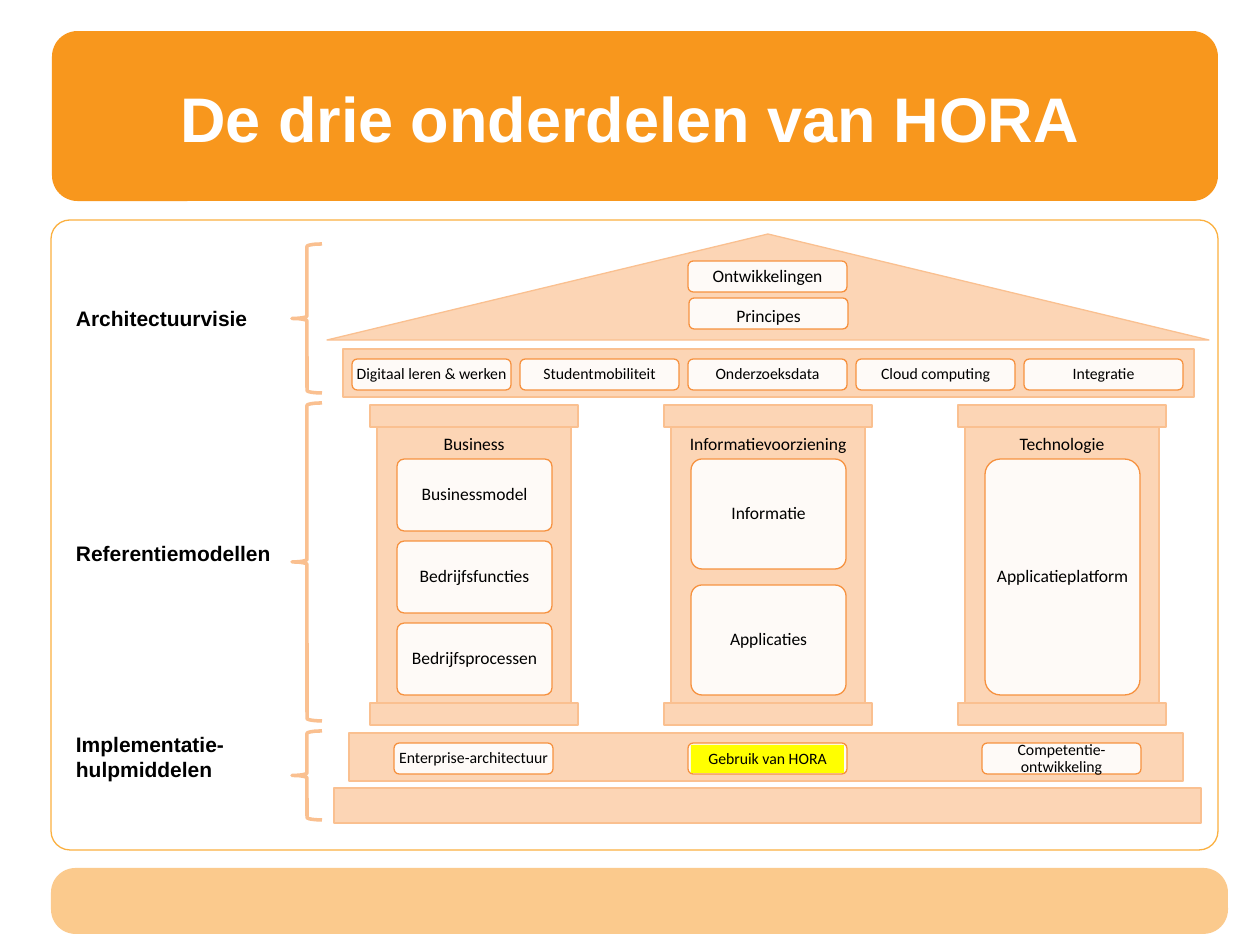
from lxml import etree
from pptx import Presentation
from pptx.dml.color import RGBColor
from pptx.enum.shapes import MSO_SHAPE
from pptx.enum.text import MSO_ANCHOR, PP_ALIGN
from pptx.oxml.ns import qn
from pptx.util import Emu, Pt

RECT = MSO_SHAPE.RECTANGLE
ROUND = MSO_SHAPE.ROUNDED_RECTANGLE
ROOF = MSO_SHAPE.ISOSCELES_TRIANGLE
BRACE = MSO_SHAPE.LEFT_BRACE
TOP, MIDDLE = MSO_ANCHOR.TOP, MSO_ANCHOR.MIDDLE
LEFT, CENTER = PP_ALIGN.LEFT, PP_ALIGN.CENTER

SCALE = 914400 / 126
ORANGE, FRAME, EDGE = "F8971D", "FBB040", "F69240"
STONE, TRIM = "FCD5B5", "FAC090"
WHITE, BLACK, YELLOW = "FFFFFF", "000000", "FFFF00"

LABELS = [("Architectuurvisie", 318, 244, 149),
          ("Referentiemodellen", 553, 403, 318),
          ("Implementatie-\vhulpmiddelen", 757, 731, 89)]
THEMES = ["Digitaal leren & werken", "Studentmobiliteit", "Onderzoeksdata",
          "Cloud computing", "Integratie"]
PILLARS = [("Business", 10, ["Businessmodel", "Bedrijfsfuncties",
                             "Bedrijfsprocessen"]),
           ("Informatievoorziening", 16, ["Informatie", "Applicaties"]),
           ("Technologie", 0, ["Applicatieplatform"])]
TOOLS = ["Enterprise-architectuur", "", "Competentie-ontwikkeling"]


def px(n):
    return Emu(round(n * SCALE))


def color(code):
    return RGBColor.from_string(code)


class Painter:
    def __init__(self, slide):
        self.shapes = slide.shapes

    def shape(self, kind, box, fill=None, line=None, width=0.75, adj=None,
              alpha=None):
        item = self.shapes.add_shape(kind, *map(px, box))
        item.shadow.inherit = False
        if adj is not None:
            item.adjustments[0] = adj
        if fill:
            item.fill.solid()
            item.fill.fore_color.rgb = color(fill)
        else:
            item.fill.background()
        if alpha:
            solid = item.element.spPr.find(qn("a:solidFill"))
            tint = solid.find(qn("a:srgbClr"))
            etree.SubElement(tint, qn("a:alpha")).set("val", str(alpha * 1000))
        if line:
            item.line.color.rgb = color(line)
            item.line.width = Pt(width)
        else:
            item.line.fill.background()
        return item

    def text(self, item, words, size, font="Calibri", ink=BLACK, bold=False,
             align=CENTER, anchor=MIDDLE, inset=(0, 0), space=0.9):
        frame = item.text_frame
        frame.word_wrap = True
        frame.vertical_anchor = anchor
        frame.margin_left = frame.margin_right = px(inset[0])
        frame.margin_top = frame.margin_bottom = px(inset[1])
        par = frame.paragraphs[0]
        par.text = words
        par.alignment = align
        par.line_spacing = space
        par.font.size = Pt(size)
        par.font.name = font
        par.font.bold = bold
        par.font.color.rgb = color(ink)

    def label(self, box, words, size, ink=BLACK, align=LEFT):
        item = self.shapes.add_textbox(*map(px, box))
        self.text(item, words, size, "Arial", ink, True, align, space=1.0)

    def stone(self, box, kind=RECT):
        return self.shape(kind, box, STONE, TRIM)

    def card(self, box, words, size, adj=None, **style):
        item = self.shape(ROUND, box, WHITE, EDGE, adj=adj, alpha=90)
        if words:
            self.text(item, words, size, **style)


def main():
    deck = Presentation()
    deck.slide_width, deck.slide_height = px(1260), px(945)
    art = Painter(deck.slides.add_slide(deck.slide_layouts[6]))

    art.shape(ROUND, (51, 868, 1177, 66), ORANGE, adj=0.37, alpha=50)
    art.shape(ROUND, (52, 31, 1166, 170), ORANGE, adj=0.15)
    art.shape(ROUND, (51, 220, 1167, 630), line=FRAME, adj=0.03)
    art.label((63, 38, 1134, 158), "De drie onderdelen van HORA", 36,
              WHITE, CENTER)

    for words, mid, top, high in LABELS:
        art.label((76, mid - 30, 212, 60), words, 12)
        art.shape(BRACE, (292, top, 30, high), line=TRIM, width=2)

    # Roof and lintel
    art.stone((327, 234, 882, 106), ROOF)
    art.card((688, 261, 159, 31), "Ontwikkelingen", 10)
    art.card((689, 298, 159, 31), "Principes", 10, anchor=TOP,
             inset=(12, 6), space=1.0)
    art.stone((343, 349, 851, 48))
    for i, words in enumerate(THEMES):
        art.card((352 + 168 * i, 359, 159, 31), words, 9)

    # Base
    art.stone((349, 733, 834, 48))
    art.stone((334, 788, 867, 35))

    # Pillars, each with the tool below it
    for i, (head, gap, models) in enumerate(PILLARS):
        left = 377 + 294 * i
        shaft = art.stone((left, 427, 194, 278))
        art.text(shaft, head, 10, anchor=TOP, inset=(8, 8))
        for top in (405, 703):
            art.stone((left - 7, top, 208, 22))
        high = (236 - gap * (len(models) - 1)) // len(models)
        for j, words in enumerate(models):
            art.card((left + 20, 459 + j * (high + gap), 155, high), words, 10,
                     adj=0.1, inset=(5, 4))
        art.card((left + 17, 743, 159, 31), TOOLS[i], 9)

    mark = art.shape(RECT, (691, 745, 153, 28), YELLOW)
    art.text(mark, "Gebruik van HORA", 9)
    deck.save("out.pptx")


if __name__ == "__main__":
    main()
